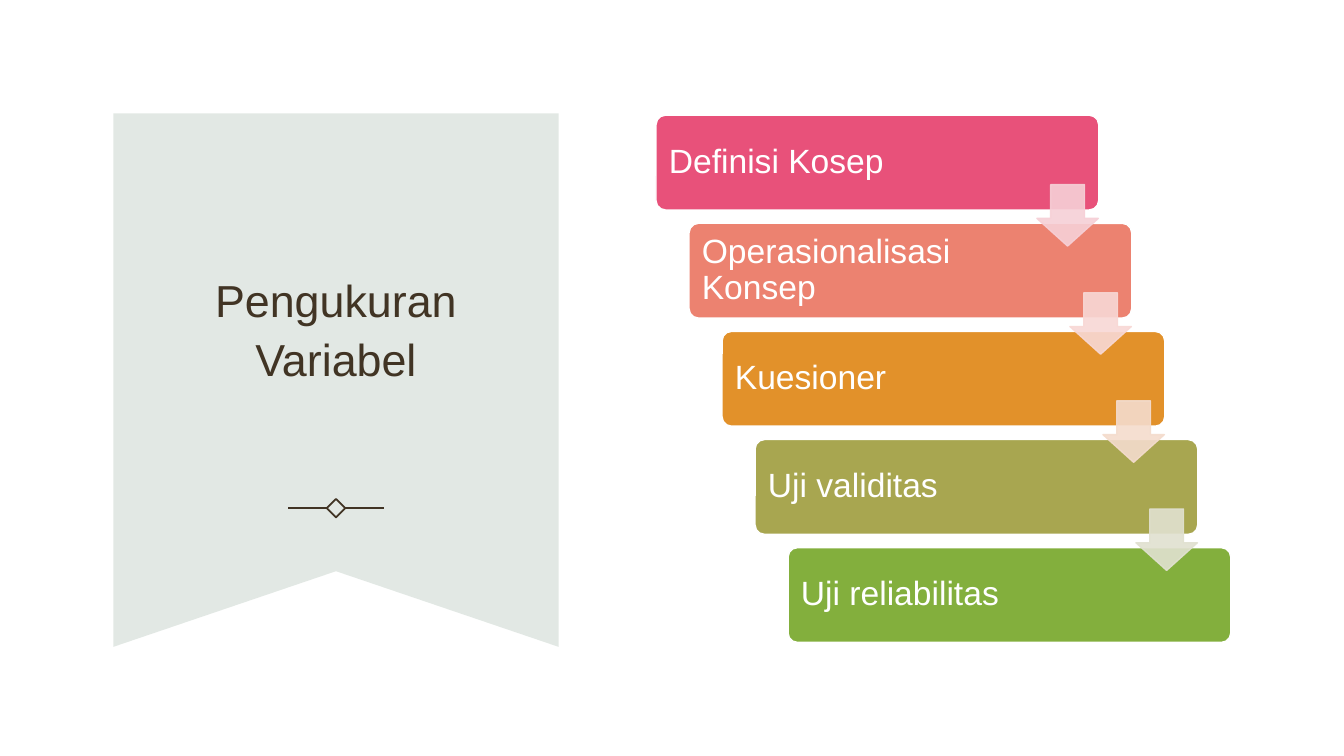
from dataclasses import dataclass

from lxml.etree import SubElement
from pptx import Presentation
from pptx.dml.color import RGBColor
from pptx.enum.shapes import MSO_CONNECTOR, MSO_SHAPE
from pptx.enum.text import MSO_ANCHOR, PP_ALIGN
from pptx.oxml.ns import qn
from pptx.shapes.autoshape import Shape
from pptx.slide import Slide
from pptx.text.text import TextFrame
from pptx.util import Inches, Pt


@dataclass(frozen=True)
class Theme:
    """Colours, font and type sizes of the slide."""

    ribbon: str = "E2E8E4"
    ink: str = "413424"
    white: str = "FFFFFF"
    font: str = "Arial"
    title_size: float = 32
    step_size: float = 24
    ornament_line: float = 1.25
    outline: float = 1
    arrow_opacity: int = 90


@dataclass(frozen=True)
class Box:
    """A rectangle in grid columns and rows."""

    left: float
    top: float
    width: float
    height: float

    def lengths(self) -> tuple[int, int, int, int]:
        """Return left, top, width and height as slide lengths."""
        return cell(self.left), cell(self.top), cell(self.width), cell(self.height)


@dataclass(frozen=True)
class Step:
    """One stair with the colour of the arrow that leaves it."""

    label: str
    fill: str
    arrow: str | None = None


THEME = Theme()
COLUMNS, ROWS = 160, 90
CELLS_PER_INCH = 12
RIBBON = Box(13.5, 13.5, 53, 63.5)
RIBBON_NOTCH = 9
TITLE = Box(18.75, 21.75, 42.5, 34.2)
ORNAMENT_ROW = 60.5
DIAMOND_RADIUS, ORNAMENT_REACH = 1.1, 5.75
FIRST_STEP = Box(78.1, 13.72, 52.7, 11.28)
STEP_RIGHT, STEP_DOWN = 3.93, 12.87
ARROW = Box(45.34, 8.26, 7.32, 7.32)
STEPS = (
    Step("Definisi Kosep", "E8517A", "F6D0D7"),
    Step("Operasionalisasi Konsep", "EC8270", "F8D8D5"),
    Step("Kuesioner", "E2912A", "F4DCCD"),
    Step("Uji validitas", "A8A650", "E1E1D0"),
    Step("Uji reliabilitas", "83AF3D"),
)


def cell(count: float) -> int:
    """Turn a number of grid cells into a slide length."""
    return Inches(count / CELLS_PER_INCH)


def write(frame: TextFrame, text: str, *, size: float, color: str,
          align: PP_ALIGN, spacing: float) -> None:
    """Put formatted, vertically centred text into a frame."""
    frame.word_wrap = True
    frame.vertical_anchor = MSO_ANCHOR.MIDDLE
    paragraph = frame.paragraphs[0]
    paragraph.alignment = align
    paragraph.line_spacing = spacing
    run = paragraph.add_run()
    run.text = text
    run.font.name = THEME.font
    run.font.size = Pt(size)
    run.font.color.rgb = RGBColor.from_string(color)


def paint(shape: Shape, fill: str | None, line: str | None, width: float = THEME.outline) -> None:
    """Set the fill and outline of a shape and drop its shadow."""
    shape.shadow.inherit = False
    if fill:
        shape.fill.solid()
        shape.fill.fore_color.rgb = RGBColor.from_string(fill)
    else:
        shape.fill.background()
    if line:
        shape.line.color.rgb = RGBColor.from_string(line)
        shape.line.width = Pt(width)
    else:
        shape.line.fill.background()


def make_translucent(shape: Shape, percent: int) -> None:
    """Give the fill and outline of a shape the same opacity."""
    for color in shape.element.spPr.iter(qn("a:srgbClr")):
        SubElement(color, qn("a:alpha"), val=str(percent * 1000))


def add_ribbon(slide: Slide) -> None:
    """Draw the notched ribbon behind the title."""
    left, top, width, height = RIBBON.lengths()
    right, bottom = left + width, top + height
    builder = slide.shapes.build_freeform(left, top)
    notch = (left + width // 2, bottom - cell(RIBBON_NOTCH))
    builder.add_line_segments([(right, top), (right, bottom), notch, (left, bottom)])
    paint(builder.convert_to_shape(), THEME.ribbon, None)


def add_title(slide: Slide) -> None:
    """Place the title over the ribbon, in front of it."""
    title = slide.shapes.title
    title.left, title.top, title.width, title.height = TITLE.lengths()
    write(title.text_frame, "Pengukuran Variabel", size=THEME.title_size,
          color=THEME.ink, align=PP_ALIGN.CENTER, spacing=1.1)
    slide.shapes.element.append(title.element)


def add_ornament(slide: Slide) -> None:
    """Draw the diamond with a line on each side."""
    center = RIBBON.left + RIBBON.width / 2
    box = Box(center - DIAMOND_RADIUS, ORNAMENT_ROW - DIAMOND_RADIUS,
              2 * DIAMOND_RADIUS, 2 * DIAMOND_RADIUS)
    diamond = slide.shapes.add_shape(MSO_SHAPE.DIAMOND, *box.lengths())
    paint(diamond, None, THEME.ink, THEME.ornament_line)
    row = cell(ORNAMENT_ROW)
    for side in (-1, 1):
        connector = slide.shapes.add_connector(
            MSO_CONNECTOR.STRAIGHT, cell(center + side * DIAMOND_RADIUS), row,
            cell(center + side * ORNAMENT_REACH), row)
        connector.line.color.rgb = RGBColor.from_string(THEME.ink)
        connector.line.width = Pt(THEME.ornament_line)
        SubElement(connector.element.spPr, qn("a:effectLst"))


def step_box(index: int) -> Box:
    """Return the place of a stair."""
    return Box(FIRST_STEP.left + index * STEP_RIGHT, FIRST_STEP.top + index * STEP_DOWN,
               FIRST_STEP.width, FIRST_STEP.height)


def add_step(slide: Slide, step: Step, box: Box) -> None:
    """Draw one labelled stair."""
    shape = slide.shapes.add_shape(MSO_SHAPE.ROUNDED_RECTANGLE, *box.lengths())
    shape.adjustments[0] = 0.1
    paint(shape, step.fill, THEME.white)
    frame = shape.text_frame
    frame.margin_left, frame.margin_right = cell(1.2), cell(12.5)
    write(frame, step.label, size=THEME.step_size, color=THEME.white,
          align=PP_ALIGN.LEFT, spacing=0.9)


def add_arrow(slide: Slide, color: str, box: Box) -> None:
    """Draw the arrow that leads from a stair to the next."""
    place = Box(box.left + ARROW.left, box.top + ARROW.top, ARROW.width, ARROW.height)
    arrow = slide.shapes.add_shape(MSO_SHAPE.DOWN_ARROW, *place.lengths())
    arrow.adjustments[0], arrow.adjustments[1] = 0.55, 0.45
    paint(arrow, color, color)
    make_translucent(arrow, THEME.arrow_opacity)


def main() -> None:
    """Build and save the slide."""
    presentation = Presentation()
    presentation.slide_width, presentation.slide_height = cell(COLUMNS), cell(ROWS)
    slide = presentation.slides.add_slide(presentation.slide_layouts[5])
    add_ribbon(slide)
    add_title(slide)
    add_ornament(slide)
    for index, step in enumerate(STEPS):
        add_step(slide, step, step_box(index))
    for index, step in enumerate(STEPS):
        if step.arrow:
            add_arrow(slide, step.arrow, step_box(index))
    presentation.save("out.pptx")


if __name__ == "__main__":
    main()
